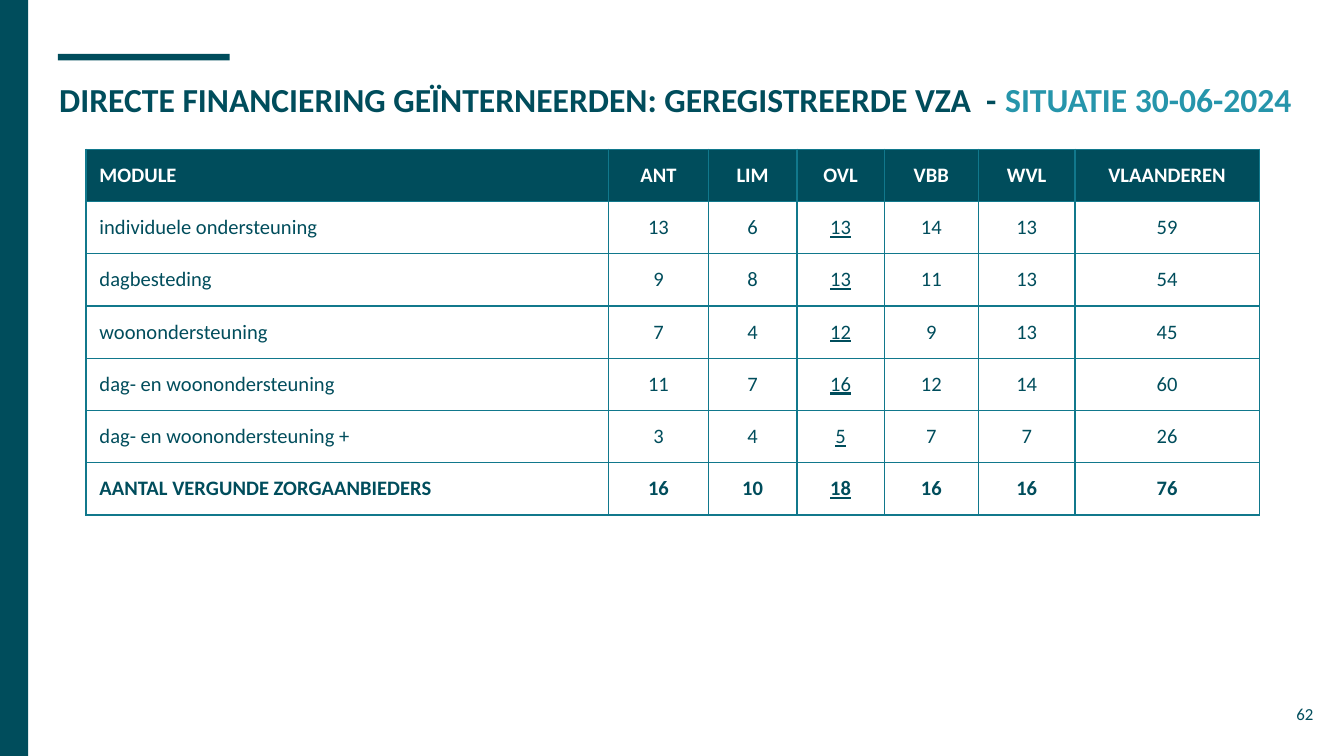
from lxml import etree
from pptx import Presentation
from pptx.dml.color import RGBColor
from pptx.enum.shapes import MSO_SHAPE as Shape
from pptx.enum.text import MSO_ANCHOR as Anchor, PP_ALIGN as Align
from pptx.oxml.ns import qn
from pptx.util import Inches, Pt

FONT = "Calibri"
DARK, ACCENT, BORDER, WHITE = "004D5C", "2695AB", "11788C", "FFFFFF"
SLIDE_WIDTH = 10
SLIDE_HEIGHT = SLIDE_WIDTH * 9 / 16

COLUMN_WIDTHS = [3.89, 0.74, 0.66, 0.65, 0.7, 0.72, 1.37]
ROW_HEIGHT = 0.34
UNDERLINED_COLUMN = 3
ROWS = [
    ["MODULE", "ANT", "LIM", "OVL", "VBB", "WVL", "VLAANDEREN"],
    ["individuele ondersteuning", 13, 6, 13, 14, 13, 59],
    ["dagbesteding", 9, 8, 13, 11, 13, 54],
    ["woonondersteuning", 7, 4, 12, 9, 13, 45],
    ["dag- en woonondersteuning", 11, 7, 16, 12, 14, 60],
    ["dag- en woonondersteuning +", 3, 4, 5, 7, 7, 26],
    ["AANTAL VERGUNDE ZORGAANBIEDERS", 16, 10, 18, 16, 16, 76],
]


def rgb(color):
    return RGBColor.from_string(color)


def set_font(font, size, color, bold=False):
    font.name, font.size, font.bold = FONT, Pt(size), bold
    font.color.rgb = rgb(color)


def set_margins(item):
    item.margin_left = item.margin_right = Inches(0.1)
    item.margin_top = item.margin_bottom = Inches(0.1)


def add_bar(slide, left, top, width, height):
    bar = slide.shapes.add_shape(
        Shape.RECTANGLE, Inches(left), Inches(top), Inches(width), Inches(height))
    bar.shadow.inherit = False
    bar.fill.solid()
    bar.fill.fore_color.rgb = rgb(DARK)
    bar.line.fill.background()


def place_title(slide, left, top, width, height):
    title = slide.shapes.title
    title.left, title.top = Inches(left), Inches(top)
    title.width, title.height = Inches(width), Inches(height)
    frame = title.text_frame
    frame.word_wrap = True
    frame.vertical_anchor = Anchor.TOP
    set_margins(frame)
    paragraph = frame.paragraphs[0]
    paragraph.alignment = Align.LEFT
    parts = [("DIRECTE FINANCIERING GEÏNTERNEERDEN: GEREGISTREERDE VZA  - ", DARK),
             ("SITUATIE 30-06-2024", ACCENT)]
    for text, color in parts:
        run = paragraph.add_run()
        run.text = text
        set_font(run.font, 18, color, bold=True)


def set_borders(cell, color, points):
    properties = cell._tc.get_or_add_tcPr()
    # Borders come before the fill in the cell properties
    for position, side in enumerate(("a:lnL", "a:lnR", "a:lnT", "a:lnB")):
        line = etree.Element(qn(side), w=str(Pt(points)))
        fill = etree.SubElement(line, qn("a:solidFill"))
        etree.SubElement(fill, qn("a:srgbClr"), val=color)
        properties.insert(position, line)


def add_module_table(slide, left, top):
    table = slide.shapes.add_table(
        len(ROWS), len(COLUMN_WIDTHS), Inches(left), Inches(top),
        Inches(sum(COLUMN_WIDTHS)), Inches(ROW_HEIGHT * len(ROWS))).table
    table.horz_banding = False
    for column, width in zip(table.columns, COLUMN_WIDTHS):
        column.width = Inches(width)
    for row_index, values in enumerate(ROWS):
        table.rows[row_index].height = Inches(ROW_HEIGHT)
        is_header = row_index == 0
        is_total = row_index == len(ROWS) - 1
        for column_index, value in enumerate(values):
            cell = table.cell(row_index, column_index)
            cell.text = str(value)
            set_margins(cell)
            if is_header:
                cell.fill.solid()
                cell.fill.fore_color.rgb = rgb(DARK)
            else:
                cell.fill.background()
            set_borders(cell, BORDER, 0.75)
            paragraph = cell.text_frame.paragraphs[0]
            paragraph.alignment = Align.CENTER if column_index else Align.LEFT
            set_font(paragraph.font, 11, WHITE if is_header else DARK,
                     bold=is_header or is_total)
            if column_index == UNDERLINED_COLUMN and not is_header:
                paragraph.font.underline = True


def add_page_number(slide, number, left, top, width, height):
    box = slide.shapes.add_textbox(
        Inches(left), Inches(top), Inches(width), Inches(height))
    frame = box.text_frame
    frame.word_wrap = True
    frame.vertical_anchor = Anchor.MIDDLE
    set_margins(frame)
    paragraph = frame.paragraphs[0]
    paragraph.text = str(number)
    paragraph.alignment = Align.RIGHT
    set_font(paragraph.font, 9, DARK)


def main():
    presentation = Presentation()
    presentation.slide_width = Inches(SLIDE_WIDTH)
    presentation.slide_height = Inches(SLIDE_HEIGHT)
    slide = presentation.slides.add_slide(presentation.slide_layouts[5])

    # Accent line above the title and band along the left edge
    add_bar(slide, 0.43, 0.4, 1.28, 0.05)
    add_bar(slide, 0, 0, 0.21, SLIDE_HEIGHT)

    place_title(slide, 0.34, 0.49, 9.43, 0.63)
    add_module_table(slide, 0.64, 1.11)
    add_page_number(slide, 62, 9.27, 5.1, 0.6, 0.43)
    presentation.save("out.pptx")


if __name__ == "__main__":
    main()
